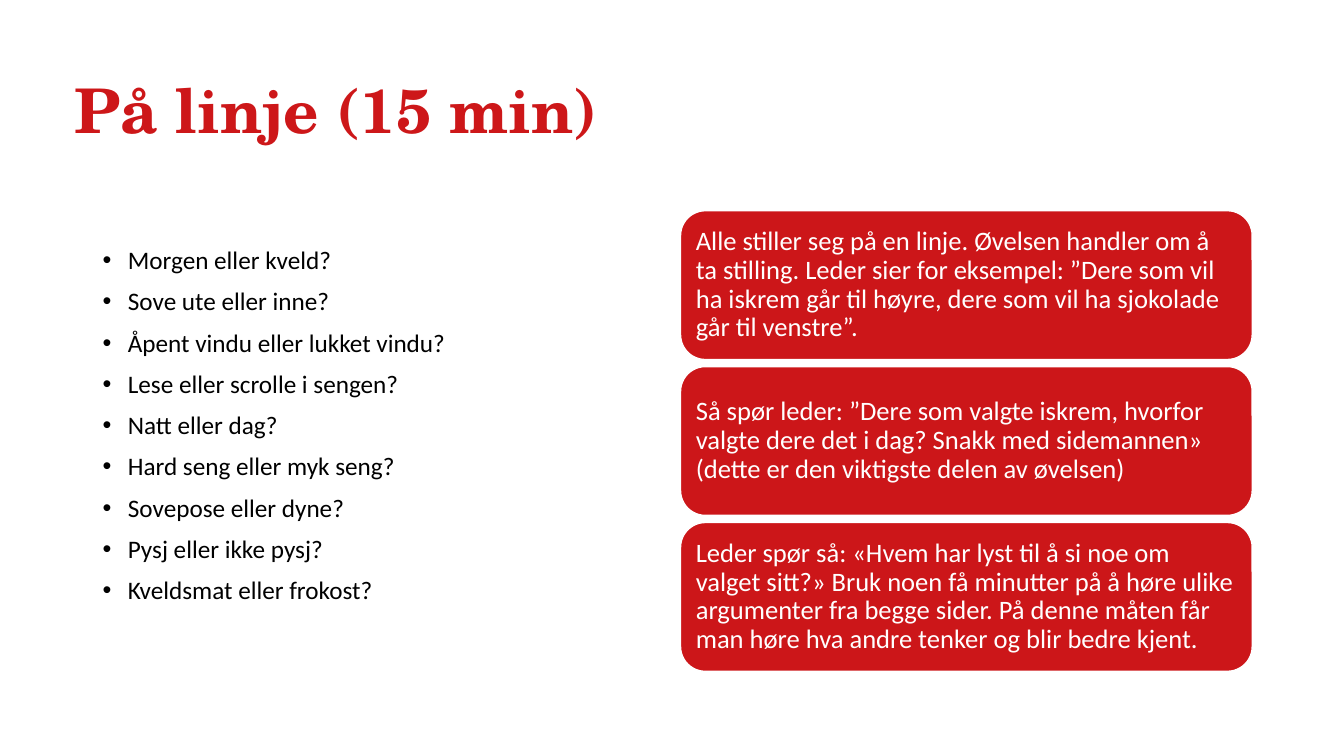
from dataclasses import dataclass

from lxml import etree
from pptx import Presentation, util as u
from pptx.dml.color import RGBColor
from pptx.enum import shapes, text
from pptx.oxml.ns import qn


@dataclass(frozen=True)
class Theme:
    title_color: RGBColor = RGBColor.from_string("CD1719")
    card_color: RGBColor = RGBColor.from_string("CC1619")
    dark: RGBColor = RGBColor.from_string("000000")
    light: RGBColor = RGBColor.from_string("FFFFFF")
    title_font: str = "TeX Gyre Schola"
    body_font: str = "Calibri"
    title_size: int = 44
    list_size: int = 18
    card_size: int = 19


THEME = Theme()

QUESTIONS = [
    "Morgen eller kveld?",
    "Sove ute eller inne?",
    "Åpent vindu eller lukket vindu?",
    "Lese eller scrolle i sengen?",
    "Natt eller dag?",
    "Hard seng eller myk seng?",
    "Sovepose eller dyne?",
    "Pysj eller ikke pysj?",
    "Kveldsmat eller frokost?",
]

STEPS = [
    "Alle stiller seg på en linje. Øvelsen handler om å ta stilling. "
    "Leder sier for eksempel: ”Dere som vil ha iskrem går til høyre, "
    "dere som vil ha sjokolade går til venstre”.",
    "Så spør leder: ”Dere som valgte iskrem, hvorfor valgte dere det i dag? "
    "Snakk med sidemannen» (dette er den viktigste delen av øvelsen)",
    "Leder spør så: «Hvem har lyst til å si noe om valget sitt?» "
    "Bruk noen få minutter på å høre ulike argumenter fra begge sider. "
    "På denne måten får man høre hva andre tenker og blir bedre kjent.",
]


def format_paragraph(paragraph, font_name, size, color, bold=False):
    paragraph.alignment = text.PP_ALIGN.LEFT
    paragraph.line_spacing = 0.9
    paragraph.font.name = font_name
    paragraph.font.size = u.Pt(size)
    paragraph.font.color.rgb = color
    paragraph.font.bold = bold


def add_bullet(paragraph, indent):
    properties = paragraph._p.get_or_add_pPr()
    properties.set("marL", str(indent))
    properties.set("indent", str(-indent))
    etree.SubElement(properties, qn("a:buFont"), typeface="Arial")
    etree.SubElement(properties, qn("a:buChar"), char="•")


def place_title(slide, left, top, width, height):
    title = slide.shapes.title
    title.left, title.top = u.Inches(left), u.Inches(top)
    title.width, title.height = u.Inches(width), u.Inches(height)
    frame = title.text_frame
    frame.text = "På linje (15 min)"
    frame.vertical_anchor = text.MSO_ANCHOR.MIDDLE
    frame.auto_size = text.MSO_AUTO_SIZE.NONE
    format_paragraph(frame.paragraphs[0], THEME.title_font, THEME.title_size,
                     THEME.title_color, bold=True)


def add_questions(slide, left, top, width, height):
    box = slide.shapes.add_textbox(u.Inches(left), u.Inches(top),
                                   u.Inches(width), u.Inches(height))
    frame = box.text_frame
    frame.word_wrap = True
    for index, question in enumerate(QUESTIONS):
        paragraph = frame.add_paragraph() if index else frame.paragraphs[0]
        paragraph.text = question
        add_bullet(paragraph, u.Inches(0.25))
        format_paragraph(paragraph, THEME.body_font, THEME.list_size, THEME.dark)
        if index:
            paragraph.space_before = u.Pt(10)


def add_steps(slide, left, top, width, height, gap=0.07):
    card_height = (height - gap * (len(STEPS) - 1)) / len(STEPS)
    for index, step in enumerate(STEPS):
        card = slide.shapes.add_shape(
            shapes.MSO_SHAPE.ROUNDED_RECTANGLE,
            u.Inches(left), u.Inches(top + index * (card_height + gap)),
            u.Inches(width), u.Inches(card_height))
        card.shadow.inherit = False
        card.fill.solid()
        card.fill.fore_color.rgb = THEME.card_color
        card.line.color.rgb = THEME.light
        card.line.width = u.Pt(1)
        frame = card.text_frame
        frame.word_wrap = True
        frame.vertical_anchor = text.MSO_ANCHOR.MIDDLE
        frame.margin_left = frame.margin_right = u.Inches(0.08)
        frame.margin_top = frame.margin_bottom = u.Inches(0.08)
        frame.text = step
        format_paragraph(frame.paragraphs[0], THEME.body_font,
                         THEME.card_size, THEME.light)


def main():
    presentation = Presentation()
    presentation.slide_width = u.Inches(13.33)
    presentation.slide_height = u.Inches(7.5)
    slide = presentation.slides.add_slide(presentation.slide_layouts[5])
    place_title(slide, 0.64, 0.4, 12.02, 1.45)
    add_questions(slide, 0.92, 2.41, 5.67, 4.35)
    add_steps(slide, 6.75, 2.09, 5.67, 4.57)
    presentation.save("out.pptx")


if __name__ == "__main__":
    main()
